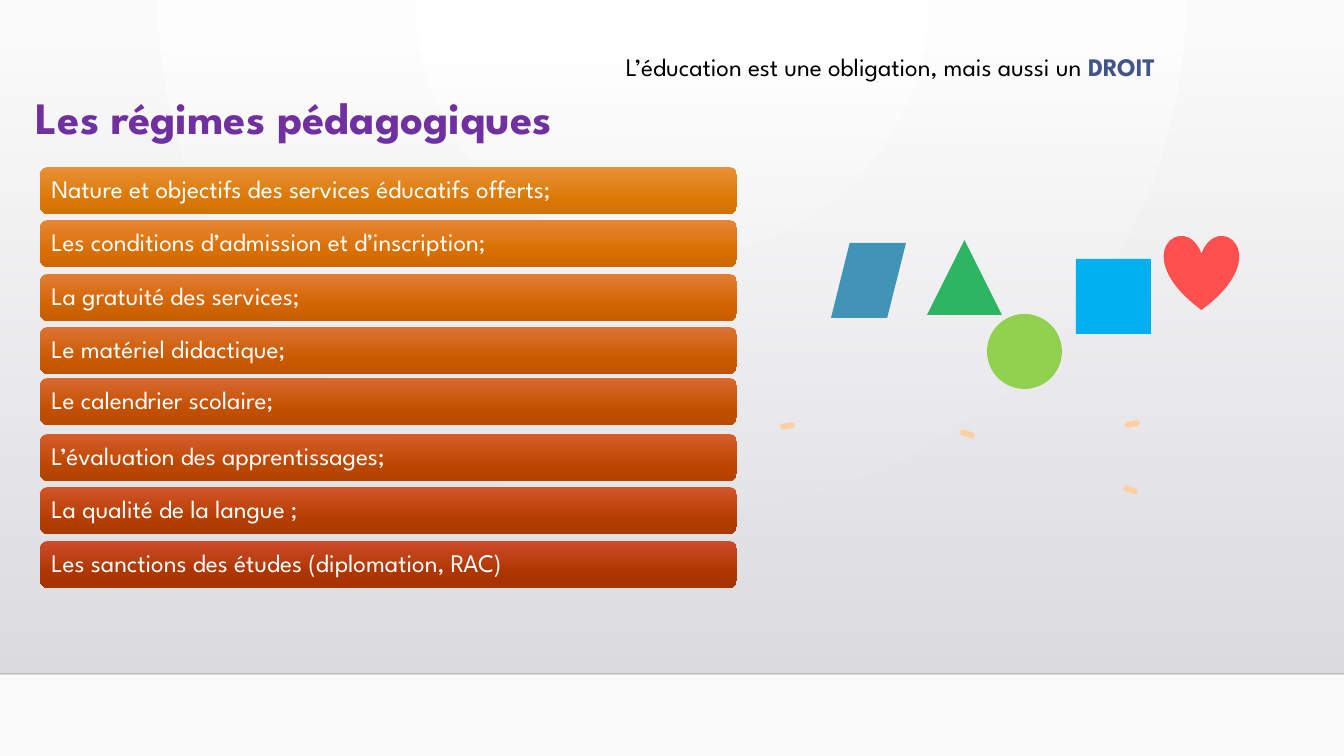
from lxml import etree
from pptx import Presentation
from pptx.dml.color import RGBColor
from pptx.enum.shapes import MSO_CONNECTOR, MSO_SHAPE
from pptx.enum.text import MSO_ANCHOR, PP_ALIGN
from pptx.oxml.ns import qn
from pptx.util import Emu, Pt

RECT = MSO_SHAPE.RECTANGLE
ROUND = MSO_SHAPE.ROUNDED_RECTANGLE
OVAL = MSO_SHAPE.OVAL
TRIANGLE = MSO_SHAPE.ISOSCELES_TRIANGLE
PARALLELOGRAM = MSO_SHAPE.PARALLELOGRAM
HEART = MSO_SHAPE.HEART
STRAIGHT = MSO_CONNECTOR.STRAIGHT
MIDDLE, BOTTOM = MSO_ANCHOR.MIDDLE, MSO_ANCHOR.BOTTOM
LEFT, JUSTIFY = PP_ALIGN.LEFT, PP_ALIGN.JUSTIFY

BLACK = RGBColor(0x00, 0x00, 0x00)
WHITE = RGBColor(0xFF, 0xFF, 0xFF)
NEAR_WHITE = RGBColor(0xFA, 0xFA, 0xFA)
GREY_TOP = RGBColor(0xDC, 0xDC, 0xE0)
GREY_BOTTOM = RGBColor(0xDE, 0xDE, 0xE2)
PURPLE = RGBColor(0x70, 0x30, 0xA0)
NAVY = RGBColor(0x41, 0x55, 0x88)
PEACH = RGBColor(0xFD, 0xD0, 0xA4)
LIME = RGBColor(0x92, 0xD0, 0x50)
SKY = RGBColor(0x00, 0xB0, 0xF0)
GREEN = RGBColor(0x2C, 0xB6, 0x63)
STEEL = RGBColor(0x42, 0x94, 0xB6)
RED = RGBColor(0xFF, 0x50, 0x50)

FONT = "League Spartan"
W, H = 1344, 756
PX = Emu(12192000) / W
LINEAR = '<a:lin ang="5400000" scaled="0"/>'
CIRCLE = ('<a:path path="circle"><a:fillToRect l="43000" t="0" r="43000" b="100000"/>'
          '</a:path>')


def px(*lengths):
    return [Emu(round(v * PX)) for v in lengths]


def set_gradient(fill, parent, stops, direction=LINEAR):
    """Fill with stops of (position %, colour, opacity %)."""
    fill.background()
    gs = "".join(
        f'<a:gs pos="{pos * 1000}"><a:srgbClr val="{color}">'
        f'<a:alpha val="{alpha * 1000}"/></a:srgbClr></a:gs>'
        for pos, color, alpha in stops)
    grad = etree.fromstring(
        '<a:gradFill xmlns:a="http://schemas.openxmlformats.org/drawingml/2006/main" '
        f'rotWithShape="1"><a:gsLst>{gs}</a:gsLst>{direction}</a:gradFill>')
    parent.replace(parent.find(qn("a:noFill")), grad)


prs = Presentation()
prs.slide_width, prs.slide_height = px(W, H)
s = prs.slides.add_slide(prs.slide_layouts[6])

# Background and wall
bg_fill = s.background.fill
bg_fill.background()
set_gradient(bg_fill, s._element.cSld.bg.bgPr,
             [(0, WHITE, 100), (100, NEAR_WHITE, 100)], CIRCLE)
wall = s.shapes.add_shape(RECT, *px(0, 51, W, 623))
wall.shadow.inherit = False
wall.line.fill.background()
set_gradient(wall.fill, wall._element.spPr,
             [(0, GREY_TOP, 0), (100, GREY_BOTTOM, 100)])

# Floor line
floor = s.shapes.add_connector(STRAIGHT, *px(0, 674, W, 674))
floor.line.color.rgb = BLACK
floor.line.width = Pt(1)
clr = floor.line._ln.find(".//" + qn("a:srgbClr"))
etree.SubElement(clr, qn("a:alpha"), val="20000")
etree.SubElement(floor._element.spPr, qn("a:effectLst"))

# Small dashes and coloured figures
DASH, FIGURE = (15, 6), (75, 75)
decorations = [
    (ROUND, 780, 423, DASH, 351.5, PEACH),
    (ROUND, 960, 431, DASH, 18, PEACH),
    (ROUND, 1125, 421, DASH, 350, PEACH),
    (ROUND, 1123, 487, DASH, 17.2, PEACH),
    (OVAL, 987, 314, FIGURE, 0, LIME),
    (RECT, 1076, 259, FIGURE, 0, SKY),
    (TRIANGLE, 927, 240, FIGURE, 0, GREEN),
    (PARALLELOGRAM, 831, 243, FIGURE, 0, STEEL),
    (HEART, 1164, 235, FIGURE, 0, RED),
]
for kind, x, y, size, angle, color in decorations:
    sp = s.shapes.add_shape(kind, *px(x, y, *size))
    sp.shadow.inherit = False
    sp.rotation = angle
    sp.fill.solid()
    sp.fill.fore_color.rgb = color
    sp.line.fill.background()
    if kind == ROUND:
        sp.adjustments[0] = 0.5

# Bars of the list
BAR_X, BAR_Y, BAR_W, BAR_H, PITCH = 40, 167, 697, 47, 53.4
bars = [
    ("Nature et objectifs des services éducatifs offerts;", "E99139", "DB7805", "D07205"),
    ("Les conditions d’admission et d’inscription;", "E68736", "D86E00", "CD6800"),
    ("La gratuité des services;", "E17D34", "D16300", "C65E00"),
    ("Le matériel didactique;", "DD7333", "CA5900", "BF5400"),
    ("Le calendrier scolaire;", "D86931", "C24F00", "B84B00"),
    ("L’évaluation des apprentissages;", "D65E2D", "BB4600", "B14300"),
    ("La qualité de la langue ;", "D3542A", "B43D00", "AA3A00"),
    ("Les sanctions des études (diplomation, RAC)", "CD4B2A", "AC3500", "A43300"),
]
texts = []  # shape, anchor, alignment, line spacing, runs
for i, (label, *colors) in enumerate(bars):
    raised = 3 if label.startswith("Le calendrier") else 0
    bar = s.shapes.add_shape(
        ROUND, *px(BAR_X, BAR_Y + round(PITCH * i) - raised, BAR_W, BAR_H))
    bar.shadow.inherit = False
    bar.line.fill.background()
    set_gradient(bar.fill, bar._element.spPr,
                 [(pos, RGBColor.from_string(c), 100) for pos, c in zip((0, 69, 100), colors)])
    tf = bar.text_frame
    tf.margin_left, tf.margin_right = px(9, 9)
    texts.append((bar, MIDDLE, LEFT, 0.9, [(label, 18, WHITE, False)]))

# Title and motto
title = s.shapes.add_textbox(*px(26, 9, 1275, 135))
title.text_frame.margin_bottom = 0
texts.append((title, BOTTOM, JUSTIFY, 0.9, [("Les régimes pédagogiques", 32, PURPLE, True)]))
motto = s.shapes.add_textbox(*px(616, 43, 673, 41))
texts.append((motto, MSO_ANCHOR.TOP, LEFT, 1.1, [
    ("L’éducation est une obligation, mais aussi un ", 18, BLACK, False),
    ("DROIT", 18, NAVY, True)]))

# Wording
for sp, anchor, align, spacing, runs in texts:
    tf = sp.text_frame
    tf.word_wrap = True
    tf.vertical_anchor = anchor
    p = tf.paragraphs[0]
    p.alignment = align
    p.line_spacing = spacing
    for text, size, color, bold in runs:
        r = p.add_run()
        r.text = text
        for name, value in {"name": FONT, "size": Pt(size), "bold": bold}.items():
            setattr(r.font, name, value)
        r.font.color.rgb = color

prs.save("out.pptx")
